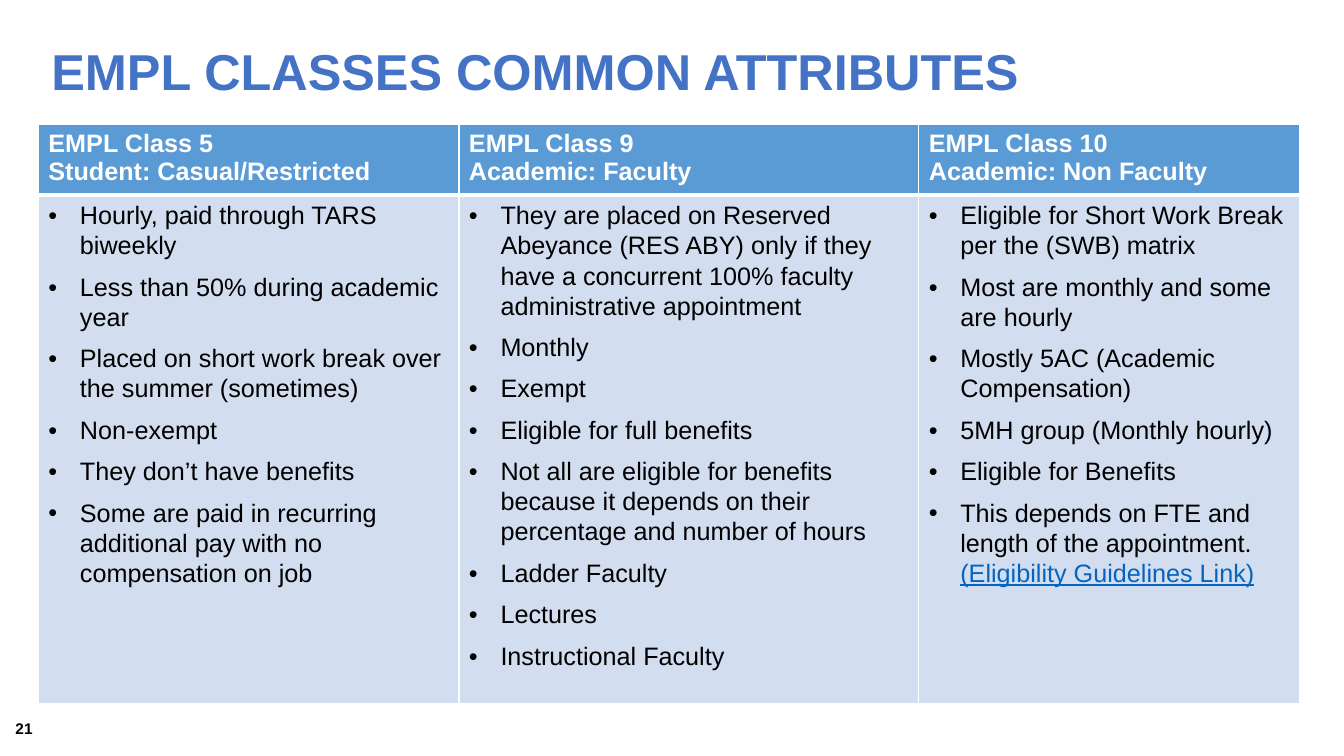
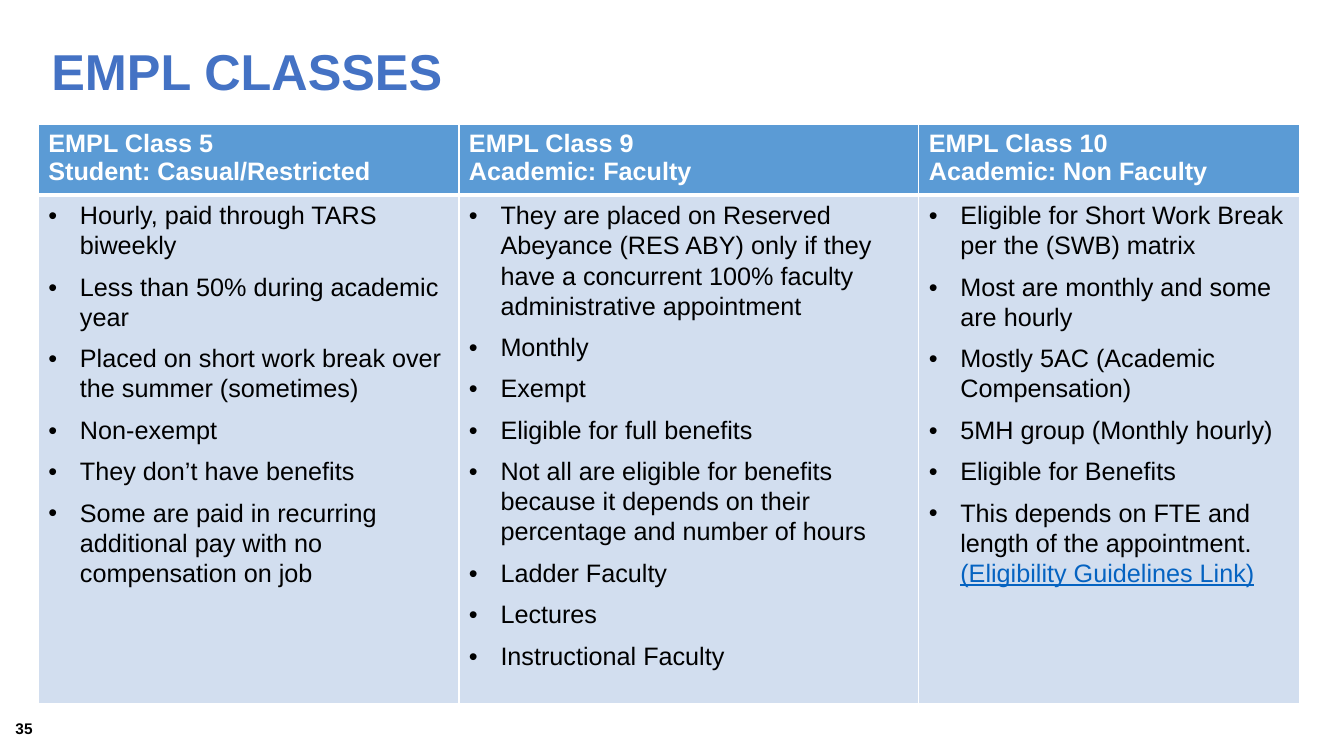
from lxml import etree
from pptx import Presentation
from pptx.dml.color import RGBColor
from pptx.enum.text import MSO_ANCHOR, PP_ALIGN
from pptx.oxml.ns import qn
from pptx.util import Pt

MIDDLE = MSO_ANCHOR.MIDDLE
LEFT = PP_ALIGN.LEFT
TITLE_ONLY = 5
FONT = "Arial"
COLOURS = {
    "title": "4472C4",
    "header": "5B9BD5",
    "body": "D2DEEF",
    "text": "000000",
    "white": "FFFFFF",
    "link": "0563C1",
}
COLUMN_WIDTHS = [300.4, 328.5, 271.8]
HEADER_HEIGHT = 48
BODY_HEIGHT = 342
BULLET_INDENT = 22.5

PAGES = [("EMPL CLASSES COMMON ATTRIBUTES", "21"), ("EMPL CLASSES", "35")]
LINK_TEXT = "(Eligibility Guidelines Link)"
CLASSES = [
    (
        ["EMPL Class 5", "Student: Casual/Restricted"],
        [
            "Hourly, paid through TARS biweekly",
            "Less than 50% during academic year",
            "Placed on short work break over the summer (sometimes)",
            "Non-exempt",
            "They don’t have benefits",
            "Some are paid in recurring additional pay with no compensation on job",
        ],
    ),
    (
        ["EMPL Class 9", "Academic: Faculty"],
        [
            "They are placed on Reserved Abeyance (RES ABY) only if they have a "
            "concurrent 100% faculty administrative appointment",
            "Monthly",
            "Exempt",
            "Eligible for full benefits",
            "Not all are eligible for benefits because it depends on their "
            "percentage and number of hours",
            "Ladder Faculty",
            "Lectures",
            "Instructional Faculty",
        ],
    ),
    (
        ["EMPL Class 10", "Academic: Non Faculty"],
        [
            "Eligible for Short Work Break per the (SWB) matrix",
            "Most are monthly and some are hourly",
            "Mostly 5AC (Academic Compensation)",
            "5MH group (Monthly hourly)",
            "Eligible for Benefits",
            "This depends on FTE and length of the appointment. ",
        ],
    ),
]


def add_span(para, text, size=18, colour="text", bold=False, underline=False):
    span = para.add_run()
    span.text = text
    span.font.name = FONT
    span.font.size = Pt(size)
    span.font.bold = bold
    span.font.underline = underline
    span.font.color.rgb = RGBColor.from_string(COLOURS[colour])


def add_paragraphs(frame, lines, **text_format):
    for index, line in enumerate(lines):
        para = frame.add_paragraph() if index else frame.paragraphs[0]
        para.alignment = LEFT
        add_span(para, line, **text_format)


def add_bullets(frame):
    for para in frame.paragraphs:
        properties = para._p.get_or_add_pPr()
        properties.set("marL", str(Pt(BULLET_INDENT)))
        properties.set("indent", str(-Pt(BULLET_INDENT)))
        etree.SubElement(properties, qn("a:buFont"), typeface=FONT)
        etree.SubElement(properties, qn("a:buChar"), char="•")
        para.line_spacing = 1.07
        para.space_after = Pt(8)


def format_cell(cell, fill, top=1, bottom=1):
    cell.fill.solid()
    cell.fill.fore_color.rgb = RGBColor.from_string(COLOURS[fill])
    properties = cell._tc.get_or_add_tcPr()
    borders = {"a:lnL": 1, "a:lnR": 1, "a:lnT": top, "a:lnB": bottom}
    for index, (tag, width) in enumerate(borders.items()):
        line = etree.Element(qn(tag), w=str(Pt(width)))
        paint = etree.SubElement(line, qn("a:solidFill"))
        etree.SubElement(paint, qn("a:srgbClr"), val=COLOURS["white"])
        properties.insert(index, line)


def add_title(page, text):
    title = page.shapes.title
    title.left, title.top, title.width, title.height = Pt(29.5), Pt(23), Pt(898.5), Pt(54)
    title.text_frame.vertical_anchor = MIDDLE
    title.text_frame.word_wrap = True
    add_paragraphs(title.text_frame, [text], size=36, colour="title", bold=True)
    title.text_frame.paragraphs[0].line_spacing = 1.0


def add_page_number(page, number):
    box = page.shapes.add_textbox(Pt(4), Pt(508.5), Pt(224), Pt(24))
    box.text_frame.word_wrap = True
    box.text_frame.vertical_anchor = MIDDLE
    add_paragraphs(box.text_frame, [number], size=11, bold=True)


def add_class_table(page):
    table = page.shapes.add_table(
        2, len(CLASSES), Pt(27.4), Pt(88.8),
        Pt(sum(COLUMN_WIDTHS)), Pt(HEADER_HEIGHT + BODY_HEIGHT),
    ).table
    table.horz_banding = False
    table.rows[0].height = Pt(HEADER_HEIGHT)
    table.rows[1].height = Pt(BODY_HEIGHT)
    for index, (heading, attributes) in enumerate(CLASSES):
        table.columns[index].width = Pt(COLUMN_WIDTHS[index])
        header, body = table.cell(0, index), table.cell(1, index)
        format_cell(header, "header", bottom=3)
        format_cell(body, "body", top=3)
        add_paragraphs(header.text_frame, heading, colour="white", bold=True)
        add_paragraphs(body.text_frame, attributes)
        add_bullets(body.text_frame)
    add_span(body.text_frame.paragraphs[-1], LINK_TEXT, colour="link", underline=True)


def main():
    deck = Presentation()
    deck.slide_width, deck.slide_height = Pt(960), Pt(540)
    for title, number in PAGES:
        page = deck.slides.add_slide(deck.slide_layouts[TITLE_ONLY])
        add_title(page, title)
        add_page_number(page, number)
        add_class_table(page)
    deck.save("out.pptx")


if __name__ == "__main__":
    main()
